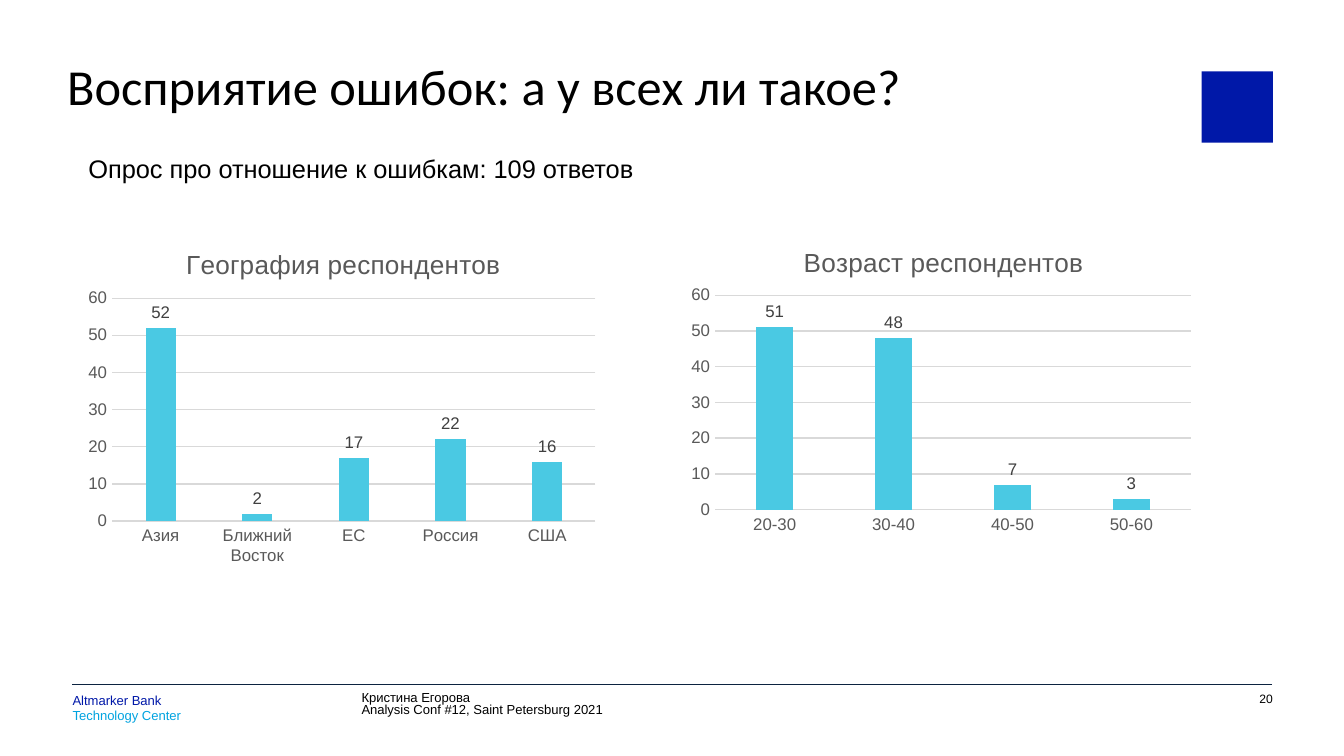
"""Builds a survey slide with two column charts of respondents."""
from pptx import Presentation
from pptx.chart.data import CategoryChartData
from pptx.dml.color import RGBColor
from pptx.enum.chart import XL_CHART_TYPE, XL_LABEL_POSITION, XL_TICK_MARK
from pptx.enum.shapes import MSO_CONNECTOR, MSO_SHAPE
from pptx.enum.text import MSO_ANCHOR, MSO_AUTO_SIZE, PP_ALIGN
from pptx.oxml import parse_xml
from pptx.oxml.ns import nsdecls, qn
from pptx.util import Pt

HEADING = "Восприятие ошибок: а у всех ли такое?"
SUMMARY = "Опрос про отношение к ошибкам: 109 ответов"
FOOTERS = [
    {"box": (38.9, 366.5, 142, 19.5), "size": 7, "spacing": 8, "align": PP_ALIGN.LEFT,
     "lines": [("Altmarker Bank", "0018A8"), ("Technology Center", "00A3E0")]},
    {"box": (193.7, 366.5, 180, 19.5), "size": 7, "spacing": 6.5, "align": PP_ALIGN.LEFT,
     "lines": [("Кристина Егорова", "000000"),
               ("Analysis Conf #12, Saint Petersburg 2021", "000000")]},
    {"box": (643, 366.5, 38.9, 19.5), "size": 6.5, "spacing": 6.5, "align": PP_ALIGN.RIGHT,
     "lines": [("20", "000000")]},
]
SURVEYS = [
    {"title": "География респондентов", "box": (40.3, 118.8, 284.4, 186.5),
     "answers": {"Азия": 52, "Ближний Восток": 2, "ЕС": 17, "Россия": 22, "США": 16},
     "title_at": (0.2, 0.06), "plot": {"x": 0.07, "y": 0.22, "w": 0.91, "h": 0.64}},
    {"title": "Возраст респондентов", "box": (363.6, 118.8, 280, 171.4),
     "answers": {"20-30": 51, "30-40": 48, "40-50": 7, "50-60": 3},
     "title_at": (0.23, 0.06), "plot": {"x": 0.07, "y": 0.23, "w": 0.91, "h": 0.67}},
]
NO_INSETS = {"margin_left": 0, "margin_top": 0, "margin_right": 0, "margin_bottom": 0}


def points(*lengths):
    return [Pt(length) for length in lengths]


def color(hex_code):
    return RGBColor.from_string(hex_code)


def assign(target, values):
    for key, value in values.items():
        setattr(target, key, value)


def style(font, size, hex_code, name="Arial"):
    assign(font, {"size": Pt(size), "name": name, "bold": False})
    font.color.rgb = color(hex_code)


def outline(line, hex_code, width):
    line.color.rgb = color(hex_code)
    line.width = Pt(width)


def place_manually(parent, position, fractions, inner=False):
    old = parent.find(qn("c:layout"))
    if old is not None:
        parent.remove(old)
    target = '<c:layoutTarget val="inner"/>' if inner else ""
    modes = "".join(f'<c:{axis}Mode val="edge"/>' for axis in "xy")
    values = "".join(f'<c:{key} val="{value}"/>' for key, value in fractions.items())
    parent.insert(position, parse_xml(
        f'<c:layout {nsdecls("c")}><c:manualLayout>{target}{modes}{values}'
        "</c:manualLayout></c:layout>"))


def add_heading(slide):
    heading = slide.shapes.title
    assign(heading, dict(zip(("left", "top", "width", "height"), points(36, 36, 607, 42.5))))
    frame = heading.text_frame
    frame.text = HEADING
    assign(frame, {**NO_INSETS, "margin_right": Pt(42.5), "word_wrap": True,
                   "vertical_anchor": MSO_ANCHOR.TOP, "auto_size": MSO_AUTO_SIZE.NONE})
    assign(frame.paragraphs[0], {"alignment": PP_ALIGN.LEFT, "line_spacing": 0.8})
    style(frame.paragraphs[0].runs[0].font, 27, "000000", "Calibri")


def add_summary(slide):
    frame = slide.shapes.add_textbox(*points(40.3, 78.5, 360, 23.8)).text_frame
    assign(frame, {"text": SUMMARY, "word_wrap": True})
    style(frame.paragraphs[0].runs[0].font, 13.6, "000000")


def add_footer(slide, footer):
    frame = slide.shapes.add_textbox(*points(*footer["box"])).text_frame
    assign(frame, {**NO_INSETS, "margin_top": Pt(5), "word_wrap": True})
    frame.text = "\n".join(text for text, _ in footer["lines"])
    for paragraph, (_, hex_code) in zip(frame.paragraphs, footer["lines"]):
        assign(paragraph, {"alignment": footer["align"], "line_spacing": Pt(footer["spacing"])})
        style(paragraph.runs[0].font, footer["size"], hex_code)


def add_survey(slide, survey):
    data = CategoryChartData()
    data.categories = list(survey["answers"])
    data.add_series("Series 1", list(survey["answers"].values()))
    chart = slide.shapes.add_chart(
        XL_CHART_TYPE.COLUMN_CLUSTERED, *points(*survey["box"]), data).chart
    style(chart.font, 10, "000000")
    assign(chart, {"has_legend": False, "has_title": True})
    caption = chart.chart_title.text_frame
    caption.text = survey["title"]
    style(caption.paragraphs[0].runs[0].font, 14, "595959")
    place_manually(chart.chart_title._element, 1, dict(zip("xy", survey["title_at"])))
    place_manually(chart.plots[0]._element.getparent(), 0, survey["plot"], inner=True)

    for axis in (chart.category_axis, chart.value_axis):
        assign(axis, {"major_tick_mark": XL_TICK_MARK.NONE, "minor_tick_mark": XL_TICK_MARK.NONE})
        style(axis.tick_labels.font, 9, "595959")
    outline(chart.category_axis.format.line, "D9D9D9", 0.75)
    assign(chart.value_axis, {"minimum_scale": 0, "maximum_scale": 60, "major_unit": 10})
    chart.value_axis.format.line.fill.background()
    outline(chart.value_axis.major_gridlines.format.line, "D9D9D9", 0.75)

    plot = chart.plots[0]
    assign(plot, {"gap_width": 219, "overlap": -27, "vary_by_categories": False,
                  "has_data_labels": True})
    assign(plot.data_labels, {"show_value": True, "position": XL_LABEL_POSITION.OUTSIDE_END})
    style(plot.data_labels.font, 9, "404040")
    columns = plot.series[0].format.fill
    columns.solid()
    columns.fore_color.rgb = color("4AC9E3")


def add_emblem(slide):
    emblem = slide.shapes.add_shape(MSO_SHAPE.RECTANGLE, *points(643.7, 38.2, 38.2, 38.2))
    emblem.shadow.inherit = False
    emblem.fill.solid()
    emblem.fill.fore_color.rgb = color("0018A8")
    emblem.line.fill.background()


def add_rule(slide):
    rule = slide.shapes.add_connector(
        MSO_CONNECTOR.STRAIGHT, *points(681.5, 366.5, 38.5, 366.5))
    outline(rule.line, "0C2340", 0.5)
    rule._element.spPr.append(parse_xml(f'<a:effectLst {nsdecls("a")}/>'))


def main():
    deck = Presentation()
    assign(deck, {"slide_width": Pt(720), "slide_height": Pt(405)})
    slide = deck.slides.add_slide(deck.slide_layouts[5])
    add_emblem(slide)
    add_rule(slide)
    add_heading(slide)
    add_summary(slide)
    for footer in FOOTERS:
        add_footer(slide, footer)
    for survey in SURVEYS:
        add_survey(slide, survey)
    deck.save("out.pptx")


if __name__ == "__main__":
    main()
